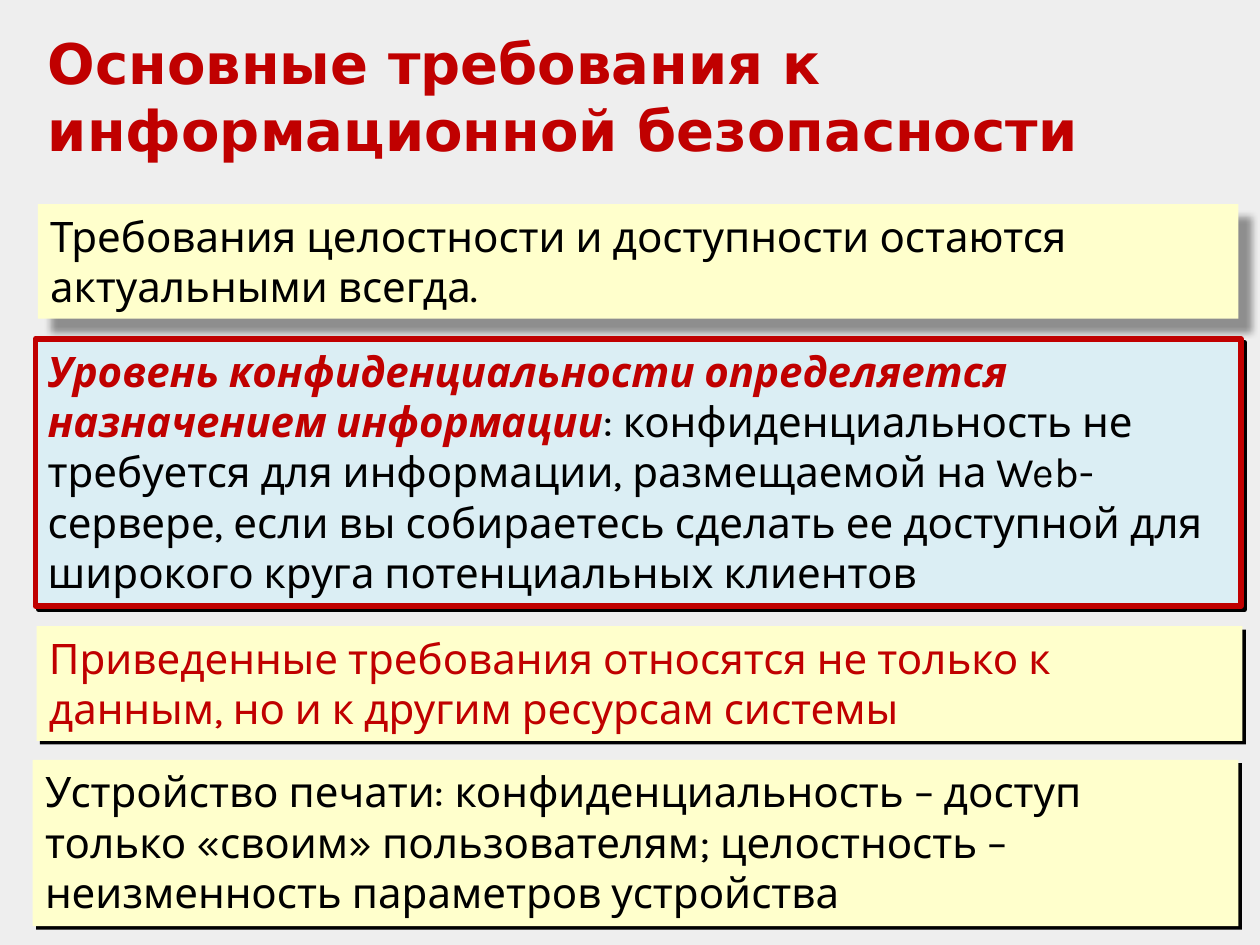
from dataclasses import dataclass

from lxml import etree
from pptx import Presentation
from pptx import util as u
from pptx.dml.color import RGBColor
from pptx.enum import shapes, text
from pptx.oxml.ns import qn

PX = 9144  # EMU per px, 100 px to the inch


@dataclass(frozen=True)
class Theme:
    background: str = "EEEEEE"
    accent: str = "C00000"
    ink: str = "000000"
    cream: str = "FFFFCC"
    ice: str = "DBEEF4"
    title_font: str = "DejaVu Sans"
    body_font: str = "Karla"
    title_size: int = 32
    body_size: int = 24
    border: int = 3


@dataclass(frozen=True)
class Shadow:
    """Opacity in percent; blur and distance in points."""
    opacity: int = 100
    blur: float = 0
    distance: float = 2.8
    angle: int = 45


class SlideBuilder:
    def __init__(self, slide, theme):
        self.slide = slide
        self.theme = theme

    def background(self):
        fill = self.slide.background.fill
        fill.solid()
        fill.fore_color.rgb = RGBColor.from_string(self.theme.background)

    def place(self, shape, box):
        shape.left, shape.top, shape.width, shape.height = (n * PX for n in box)

    def style(self, font, color, bold=False, italic=False):
        font.color.rgb = RGBColor.from_string(color)
        font.bold, font.italic = bold, italic

    def title(self, box, words):
        shape = self.slide.shapes.title
        self.place(shape, box)
        frame = shape.text_frame
        frame.text = words
        frame.word_wrap = True
        frame.auto_size = text.MSO_AUTO_SIZE.NONE
        frame.vertical_anchor = text.MSO_ANCHOR.MIDDLE
        paragraph = frame.paragraphs[0]
        paragraph.alignment = text.PP_ALIGN.LEFT
        paragraph.font.name = self.theme.title_font
        paragraph.font.size = u.Pt(self.theme.title_size)
        self.style(paragraph.font, self.theme.accent, bold=True)

    def shadow(self, shape, shadow):
        shape.shadow.inherit = False
        effects = shape._element.spPr.find(qn("a:effectLst"))
        outer = etree.SubElement(
            effects, qn("a:outerShdw"), blurRad=str(u.Pt(shadow.blur)),
            dist=str(u.Pt(shadow.distance)), dir=str(shadow.angle * 60000),
            algn="tl", rotWithShape="0")
        color = etree.SubElement(outer, qn("a:srgbClr"), val=self.theme.ink)
        etree.SubElement(color, qn("a:alpha"), val=str(shadow.opacity * 1000))

    def panel(self, box, words, fill, color, lead="", border=None, shadow=Shadow()):
        shape = self.slide.shapes.add_shape(shapes.MSO_SHAPE.RECTANGLE, 0, 0, 0, 0)
        self.place(shape, box)
        shape.fill.solid()
        shape.fill.fore_color.rgb = RGBColor.from_string(fill)
        if border:
            shape.line.color.rgb = RGBColor.from_string(border)
            shape.line.width = u.Pt(self.theme.border)
        else:
            shape.line.fill.background()
        self.shadow(shape, shadow)

        frame = shape.text_frame
        frame.word_wrap = True
        frame.auto_size = text.MSO_AUTO_SIZE.SHAPE_TO_FIT_TEXT
        frame.vertical_anchor = text.MSO_ANCHOR.TOP
        paragraph = frame.paragraphs[0]
        paragraph.alignment = text.PP_ALIGN.LEFT
        paragraph.font.name = self.theme.body_font
        paragraph.font.size = u.Pt(self.theme.body_size)
        self.style(paragraph.font, color)
        if lead:
            run = paragraph.add_run()
            run.text = lead
            self.style(run.font, self.theme.accent, bold=True, italic=True)
        paragraph.add_run().text = words


def main():
    presentation = Presentation()
    presentation.slide_width, presentation.slide_height = 1000 * PX, 750 * PX
    slide = presentation.slides.add_slide(presentation.slide_layouts.get_by_name("Title Only"))
    theme = Theme()
    builder = SlideBuilder(slide, theme)

    # Background and title
    builder.background()
    builder.title((28, 21, 937, 110), "Основные требования к информационной безопасности")

    # Integrity and availability
    builder.panel((30, 162, 953, 91),
                  "Требования целостности и доступности остаются актуальными всегда.",
                  theme.cream, theme.ink,
                  shadow=Shadow(opacity=40, blur=4, distance=10))

    # Confidentiality, framed
    builder.panel((28, 269, 957, 212),
                  ": конфиденциальность не требуется для информации, размещаемой на "
                  "Web-сервере, если вы собираетесь сделать ее доступной для "
                  "широкого круга потенциальных клиентов",
                  theme.ice, theme.ink, border=theme.accent,
                  lead="Уровень конфиденциальности определяется назначением информации")

    # Other resources and the printer example
    builder.panel((29, 497, 957, 91),
                  "Приведенные требования относятся не только к данным, "
                  "но и к другим ресурсам системы",
                  theme.cream, theme.accent)
    builder.panel((26, 603, 957, 132),
                  "Устройство печати: конфиденциальность – доступ только «своим» "
                  "пользователям; целостность – неизменность параметров устройства",
                  theme.cream, theme.ink)

    presentation.save("out.pptx")


if __name__ == "__main__":
    main()
